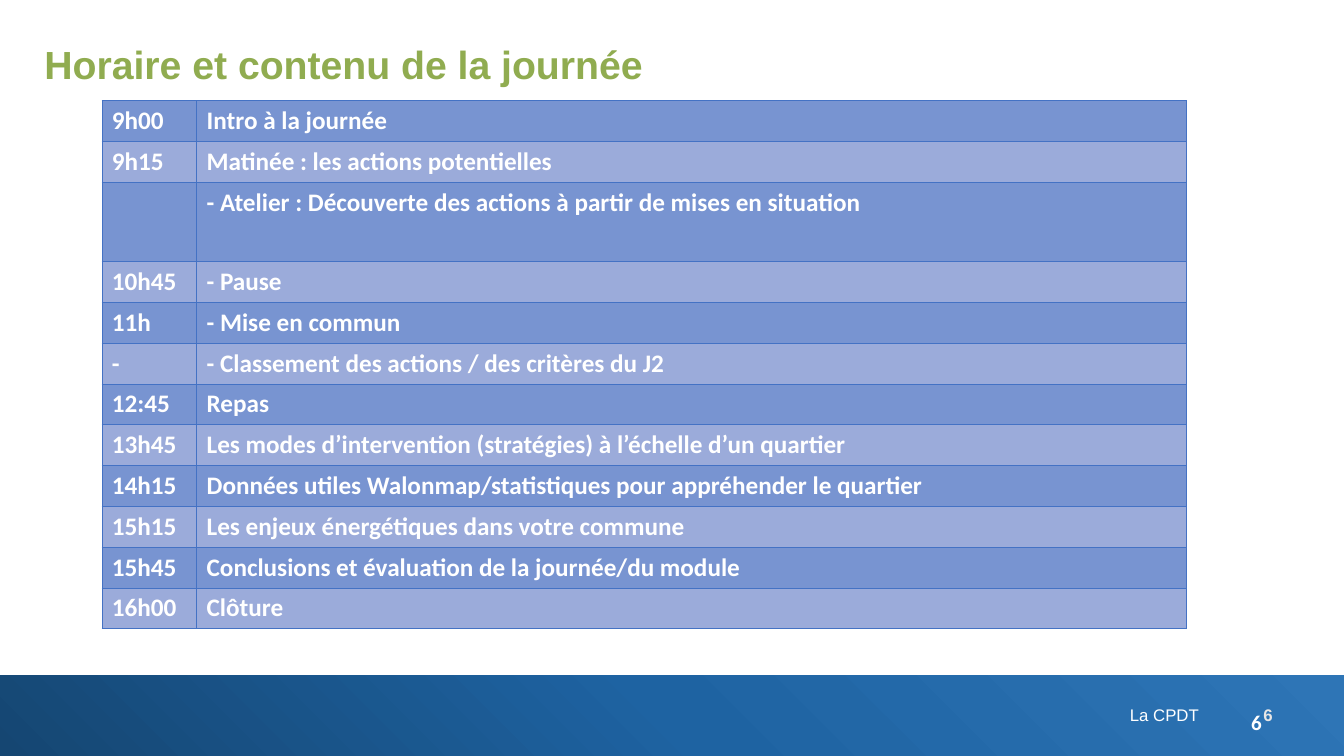
import copy

import pptx
import pptx.dml.color
import pptx.enum.shapes
import pptx.enum.text
import pptx.oxml
import pptx.util
from pptx.util import Inches

TITLE = "Horaire et contenu de la journée"
SCHEDULE = [
    ("9h00", "Intro à la journée"),
    ("9h15", "Matinée : les actions potentielles"),
    ("", "- Atelier : Découverte des actions à partir de mises en situation"),
    ("10h45", "- Pause"),
    ("11h", "- Mise en commun"),
    ("-", "- Classement des actions / des critères du J2"),
    ("12:45", "Repas"),
    ("13h45", "Les modes d’intervention (stratégies) à l’échelle d’un quartier"),
    ("14h15", "Données utiles Walonmap/statistiques pour appréhender le quartier"),
    ("15h15", "Les enjeux énergétiques dans votre commune"),
    ("15h45", "Conclusions et évaluation de la journée/du module"),
    ("16h00", "Clôture"),
]
WORKSHOP_ROW = 2
COLUMN_WIDTHS = (0.94, 9.82)
ROW_HEIGHT, WORKSHOP_HEIGHT = 0.405, 0.785

COLORS = {
    "title": "90AC50", "white": "FFFFFF", "number": "E7E6E6",
    "dark row": "7894D1", "light row": "9BABDA", "border": "4472C4",
}
BAND_STOPS = [(0, "154672"), (50, "1E63A2"), (100, "2E75B6")]
ALIGN = pptx.enum.text.PP_ALIGN
ANCHOR = pptx.enum.text.MSO_ANCHOR
NAMESPACE = 'xmlns:a="http://schemas.openxmlformats.org/drawingml/2006/main"'

# Left, top, width, height, text and format of the footer items
FOOTER = [
    ((8.29, 6.94, 3.7, 0.3), "La CPDT", dict(size=12, align=ALIGN.RIGHT)),
    ((11.98, 6.94, 0.74, 0.3), "6",
     dict(size=12, color="number", bold=True, align=ALIGN.RIGHT)),
    ((12.31, 6.99, 0.71, 0.35), "6", dict(size=15, font="Calibri", bold=True)),
]


def write(frame, text, size=18, font="Arial", color="white", bold=False,
          align=ALIGN.LEFT, spacing=None):
    frame.word_wrap = True
    paragraph = frame.paragraphs[0]
    paragraph.alignment = align
    paragraph.line_spacing = spacing
    run = paragraph.add_run()
    run.text = text
    run.font.size = pptx.util.Pt(size)
    run.font.name = font
    run.font.bold = bold
    run.font.color.rgb = pptx.dml.color.RGBColor.from_string(COLORS[color])


def add_footer_band(slide):
    band = slide.shapes.add_shape(pptx.enum.shapes.MSO_SHAPE.RECTANGLE,
                                  0, Inches(6.7), Inches(13.33), Inches(0.8))
    band.shadow.inherit = False
    band.line.fill.background()
    band.fill.gradient()
    band.fill.gradient_angle = 45
    stops = band.fill.gradient_stops
    # A gradient starts with two stops; the middle one is added between them
    first = stops[0]._gs
    first.addnext(copy.deepcopy(first))
    for stop, (position, color) in zip(band.fill.gradient_stops, BAND_STOPS):
        stop.position = position / 100
        stop.color.rgb = pptx.dml.color.RGBColor.from_string(color)


def add_borders(cell):
    properties = cell._tc.get_or_add_tcPr()
    for index, side in enumerate(("lnL", "lnR", "lnT", "lnB")):
        properties.insert(index, pptx.oxml.parse_xml(
            f'<a:{side} {NAMESPACE} w="6350"><a:solidFill>'
            f'<a:srgbClr val="{COLORS["border"]}"/></a:solidFill></a:{side}>'))


def add_schedule(slide):
    heights = [WORKSHOP_HEIGHT if i == WORKSHOP_ROW else ROW_HEIGHT
               for i in range(len(SCHEDULE))]
    table = slide.shapes.add_table(
        len(SCHEDULE), len(COLUMN_WIDTHS), Inches(1.01), Inches(1),
        Inches(sum(COLUMN_WIDTHS)), Inches(sum(heights))).table
    for column, width in zip(table.columns, COLUMN_WIDTHS):
        column.width = Inches(width)
    for i, entry in enumerate(SCHEDULE):
        table.rows[i].height = Inches(heights[i])
        row_color = "light row" if i % 2 else "dark row"
        for j, text in enumerate(entry):
            cell = table.cell(i, j)
            cell.fill.solid()
            cell.fill.fore_color.rgb = pptx.dml.color.RGBColor.from_string(
                COLORS[row_color])
            add_borders(cell)
            if text:
                write(cell.text_frame, text, font="Calibri", bold=True,
                      align=ALIGN.LEFT if text.startswith("- ") else ALIGN.JUSTIFY)


def main():
    presentation = pptx.Presentation()
    presentation.slide_width = Inches(13.33)
    presentation.slide_height = Inches(7.5)
    slide = presentation.slides.add_slide(presentation.slide_layouts[5])

    # Footer
    add_footer_band(slide)
    for place, text, style in FOOTER:
        box = slide.shapes.add_textbox(*map(Inches, place))
        write(box.text_frame, text, **style)

    # Title
    title = slide.shapes.title
    title.left, title.top, title.width, title.height = map(
        Inches, (0.34, 0.4, 12.68, 0.9))
    title.text_frame.vertical_anchor = ANCHOR.TOP
    write(title.text_frame, TITLE, size=28, color="title", bold=True, spacing=0.9)

    # Schedule
    add_schedule(slide)
    presentation.save("out.pptx")


if __name__ == "__main__":
    main()
